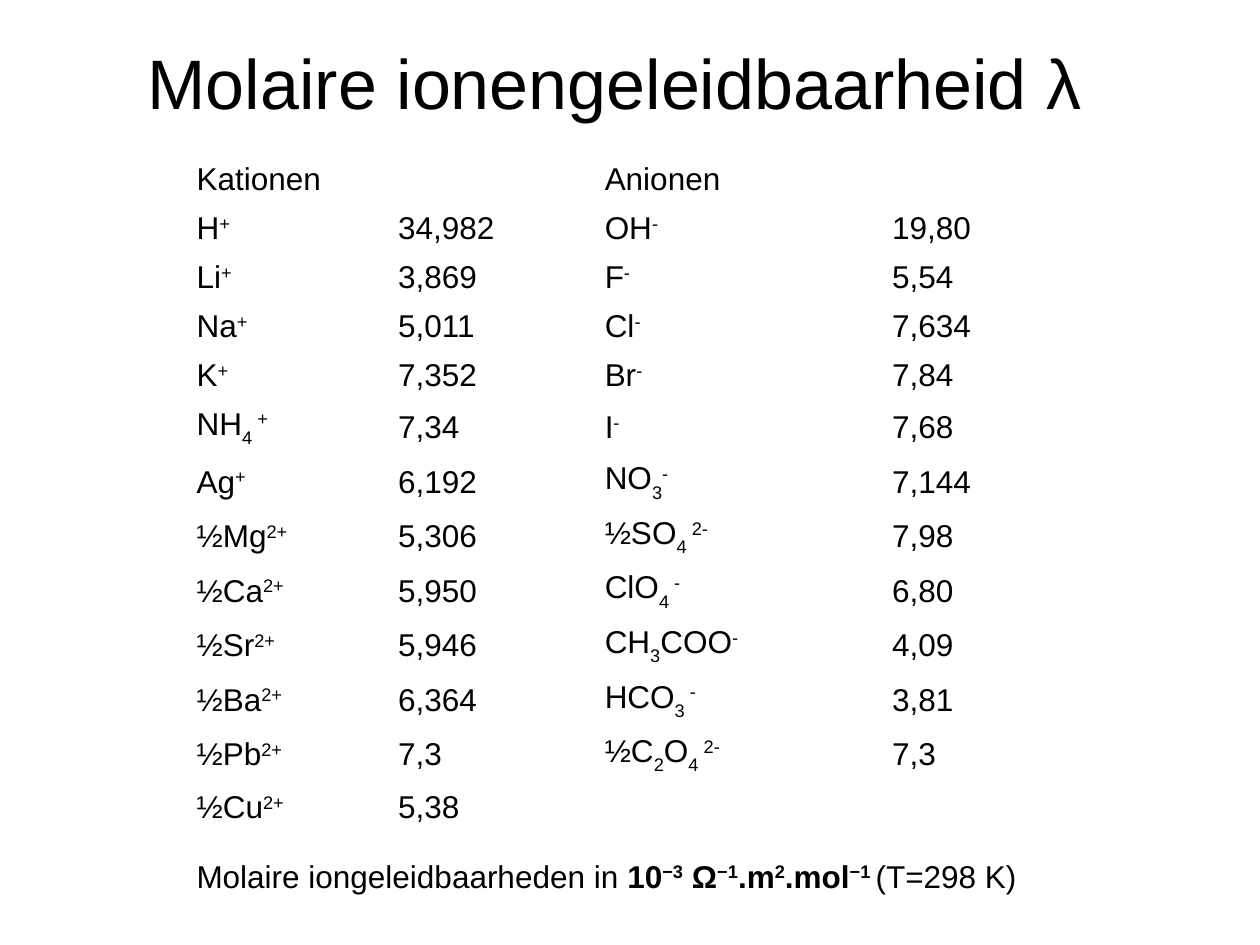
from typing import NamedTuple

from pptx import Presentation
from pptx.dml.color import RGBColor
from pptx.enum.text import MSO_ANCHOR, PP_ALIGN
from pptx.util import Inches, Pt

MIDDLE = MSO_ANCHOR.MIDDLE
CENTER = PP_ALIGN.CENTER
TITLE_ONLY = 5
BLACK = "000000"
INDENT = Inches(0.38)
COLUMN_WIDTHS = (1.6, 1.64, 2.28, 1.4)
ROW_HEIGHT, NOTE_HEIGHT = 0.39, 0.7
BASELINES = {"^": "30000", "_": "-30000"}


class Ion(NamedTuple):
    """Formula pieces are split by |; ^ raises, _ lowers and * makes bold."""
    formula: str
    conductivity: str


CATIONS = (
    Ion("H|^+", "34,982"), Ion("Li|^+", "3,869"), Ion("Na|^+", "5,011"),
    Ion("K|^+", "7,352"), Ion("NH|_4 |^+", "7,34"), Ion("Ag|^+", "6,192"),
    Ion("½Mg|^2+", "5,306"), Ion("½Ca|^2+", "5,950"),
    Ion("½Sr|^2+", "5,946"), Ion("½Ba|^2+", "6,364"),
    Ion("½Pb|^2+", "7,3"), Ion("½Cu|^2+", "5,38"),
)
ANIONS = (
    Ion("OH|^-", "19,80"), Ion("F|^-", "5,54"), Ion("Cl|^-", "7,634"),
    Ion("Br|^-", "7,84"), Ion("I|^-", "7,68"), Ion("NO|_3|^-", "7,144"),
    Ion("½SO|_4 |^2-", "7,98"), Ion("ClO|_4 |^-", "6,80"),
    Ion("CH|_3|COO|^-", "4,09"), Ion("HCO|_3 |^-", "3,81"),
    Ion("½C|_2|O|_4 |^2-", "7,3"),
)
NOTE = ("Molaire iongeleidbaarheden in |*10|*^−3|* Ω|*^−1|*.m|*^2|*.mol|"
        "*^−1 |(T=298 K)")


def color(value: str) -> RGBColor:
    return RGBColor.from_string(value)


def add_span(para, text: str, size: float, bold: bool = False):
    span = para.add_run()
    span.text = text
    for name, value in {"name": "Arial", "size": Pt(size), "bold": bold}.items():
        setattr(span.font, name, value)
    span.font.color.rgb = color(BLACK)
    return span


def write_cell(cell, markup: str) -> None:
    cell.vertical_anchor = MIDDLE
    para = cell.text_frame.paragraphs[0]
    properties = para._p.get_or_add_pPr()
    properties.set("marL", str(INDENT))
    properties.set("indent", str(-INDENT))
    for piece in markup.split("|"):
        bold = piece.startswith("*")
        text = piece.removeprefix("*")
        baseline = BASELINES.get(text[0])
        span = add_span(para, text[1:] if baseline else text, 18, bold)
        if baseline:
            span._r.get_or_add_rPr().set("baseline", baseline)


def add_title(page, text: str) -> None:
    title = page.shapes.title
    place = {"left": 0.5, "top": 0.3, "width": 8.75, "height": 0.69}
    for name, value in place.items():
        setattr(title, name, Inches(value))
    title.text_frame.vertical_anchor = MIDDLE
    para = title.text_frame.paragraphs[0]
    para.alignment = CENTER
    add_span(para, text, 40)


def add_ion_table(page) -> None:
    last = len(CATIONS) + 1
    height = last * ROW_HEIGHT + NOTE_HEIGHT
    table = page.shapes.add_table(
        last + 1, len(COLUMN_WIDTHS), Inches(1.46), Inches(1.23),
        Inches(sum(COLUMN_WIDTHS)), Inches(height)).table
    table.first_row = table.horz_banding = False
    for column, width in zip(table.columns, COLUMN_WIDTHS):
        column.width = Inches(width)
    for row in table.rows:
        row.height = Inches(ROW_HEIGHT)
    table.rows[last].height = Inches(NOTE_HEIGHT)
    for cell in table.iter_cells():
        cell.fill.background()

    # Each group has a merged heading above formulas and values
    for left, heading, ions in ((0, "Kationen", CATIONS), (2, "Anionen", ANIONS)):
        table.cell(0, left).merge(table.cell(0, left + 1))
        write_cell(table.cell(0, left), heading)
        for row, ion in enumerate(ions, start=1):
            for offset, markup in enumerate(ion):
                write_cell(table.cell(row, left + offset), markup)

    # Unit note across the full width
    table.cell(last, 0).merge(table.cell(last, len(COLUMN_WIDTHS) - 1))
    write_cell(table.cell(last, 0), NOTE)


def main() -> None:
    deck = Presentation()
    deck.slide_width, deck.slide_height = Inches(10), Inches(7.5)
    page = deck.slides.add_slide(deck.slide_layouts[TITLE_ONLY])
    add_ion_table(page)
    add_title(page, "Molaire ionengeleidbaarheid λ")
    deck.save("out.pptx")


if __name__ == "__main__":
    main()
